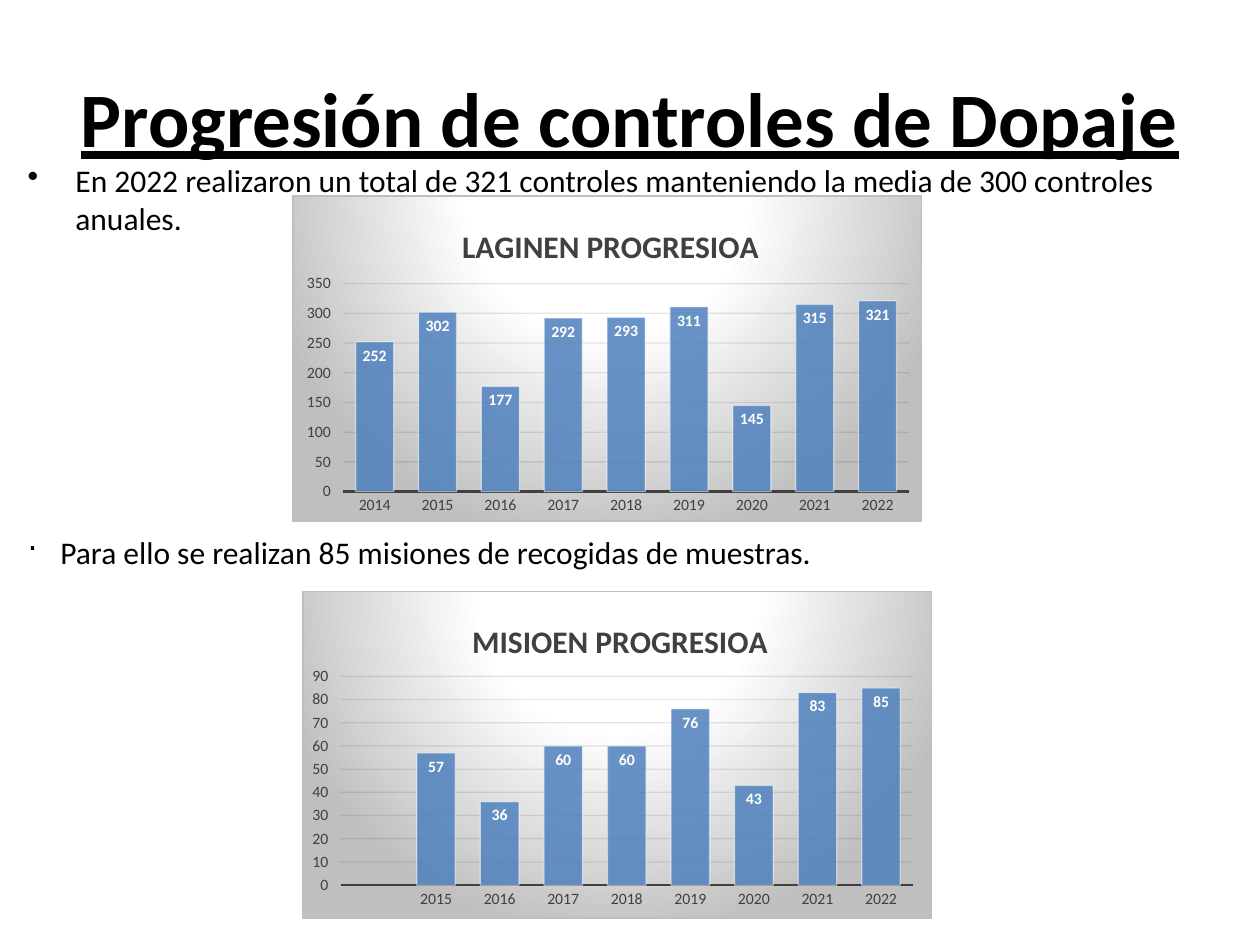
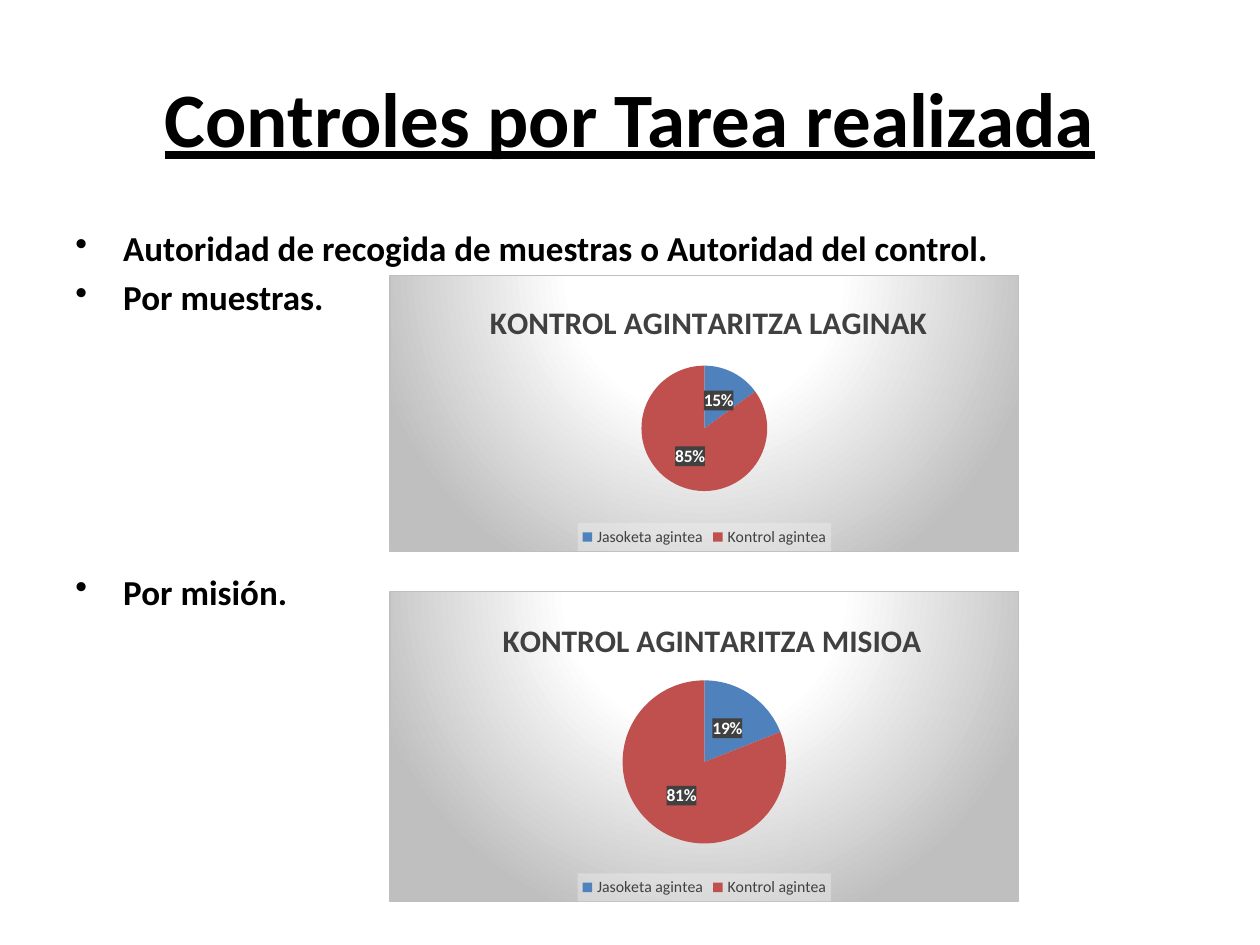
import pptx
import pptx.chart.data
import pptx.dml.color
import pptx.enum.chart
import pptx.enum.text
import pptx.oxml
import pptx.oxml.ns
import pptx.util

PX = 9144
FONT = "Calibri"
COLORS = {
    "black": "000000", "white": "FFFFFF", "gray": "404040", "silver": "BFBFBF",
    "grid": "0D0D0D", "legend": "F2F2F2", "blue": "4F81BD", "red": "C0504D",
}
NAMESPACES = pptx.oxml.ns.nsdecls("a", "c")
qn = pptx.oxml.ns.qn
Pt = pptx.util.Pt


def rgb(name):
    """Return the named colour as an RGB value."""
    return pptx.dml.color.RGBColor.from_string(COLORS[name])


def fade(element, percent):
    """Make every colour inside the element partly transparent."""
    for color in element.iter(qn("a:srgbClr")):
        pptx.oxml.ns.qn("a:alpha")
        alpha = color.makeelement(qn("a:alpha"), {"val": str(percent * 1000)})
        color.append(alpha)


def solid(name, percent):
    """Return chart shape properties with a transparent solid fill."""
    element = pptx.oxml.parse_xml(
        f'<c:spPr {NAMESPACES}><a:solidFill><a:srgbClr val="{COLORS[name]}"/>'
        '</a:solidFill></c:spPr>')
    fade(element, percent)
    return element


def backdrop():
    """Return the radial gradient and border behind a chart."""
    white, silver = COLORS["white"], COLORS["silver"]
    stops = "".join(
        f'<a:gs pos="{position * 1000}"><a:srgbClr val="{color}"/></a:gs>'
        for position, color in ((0, white), (39, white), (100, silver)))
    return pptx.oxml.parse_xml(
        f'<c:spPr {NAMESPACES}><a:gradFill flip="none" rotWithShape="1">'
        f'<a:gsLst>{stops}</a:gsLst><a:path path="circle">'
        '<a:fillToRect l="50000" t="-80000" r="50000" b="180000"/></a:path>'
        f'</a:gradFill><a:ln w="9525"><a:solidFill><a:srgbClr val="{silver}"/>'
        '</a:solidFill></a:ln></c:spPr>')


def arrange(parent, target="", **fractions):
    """Place a chart part by fractions of the chart area."""
    for old_layout in parent.findall(qn("c:layout")):
        parent.remove(old_layout)
    modes = '<c:xMode val="edge"/><c:yMode val="edge"/>'
    values = "".join(f'<c:{key} val="{value}"/>' for key, value in fractions.items())
    layout = pptx.oxml.parse_xml(
        f"<c:layout {NAMESPACES}><c:manualLayout>{target}{modes}{values}"
        "</c:manualLayout></c:layout>")
    text = parent.find(qn("c:tx"))
    if text is None:
        parent.insert(0, layout)
    else:
        text.addnext(layout)


class Deck:
    """Holds the presentation style and the current slide."""

    def __init__(self, width, height):
        """Start an empty presentation."""
        self.presentation = pptx.Presentation()
        self.presentation.slide_width = width * PX
        self.presentation.slide_height = height * PX
        self.slide = None

    def style(self, font, size, color="black", bold=False):
        """Apply the shared typeface with a size and colour."""
        font.name = FONT
        font.size = Pt(size)
        font.bold = bold
        font.color.rgb = rgb(color)

    def text_frame(self, left, top, width, height):
        """Add a wrapping text box and return its frame."""
        box = self.slide.shapes.add_textbox(left * PX, top * PX, width * PX, height * PX)
        box.text_frame.word_wrap = True
        return box.text_frame

    def add_slide(self, title):
        """Add a blank slide with an underlined title."""
        self.slide = self.presentation.slides.add_slide(self.presentation.slide_layouts[6])
        frame = self.text_frame(50, 30, 900, 125)
        frame.vertical_anchor = pptx.enum.text.MSO_ANCHOR.MIDDLE
        paragraph = frame.paragraphs[0]
        paragraph.text = title
        paragraph.alignment = pptx.enum.text.PP_ALIGN.CENTER
        self.style(paragraph.font, 44, bold=True)
        paragraph.font.underline = True

    def add_bullets(self, left, top, width, height, lines, size,
                    bold=False, bullet="•", indent=38):
        """Add a bulleted list."""
        frame = self.text_frame(left, top, width, height)
        for number, line in enumerate(lines):
            paragraph = frame.add_paragraph() if number else frame.paragraphs[0]
            paragraph.text = line
            properties = paragraph._p.get_or_add_pPr()
            properties.set("marL", str(indent * PX))
            properties.set("indent", str(-indent * PX))
            properties.append(properties.makeelement(qn("a:buChar"), {"char": bullet}))
            if number:
                paragraph.space_before = Pt(size * 0.2)
            self.style(paragraph.font, size, bold=bold)

    def add_chart(self, kind, area, title, title_left, categories, values, plot_area):
        """Add a titled single-series chart on the gradient backdrop."""
        data = pptx.chart.data.CategoryChartData()
        data.categories = categories
        data.add_series("Series 1", values)
        chart = self.slide.shapes.add_chart(kind, *(length * PX for length in area), data).chart
        self.style(chart.font, 10)
        chart.has_legend = False
        chart.has_title = True
        paragraph = chart.chart_title.text_frame.paragraphs[0]
        paragraph.text = title
        self.style(paragraph.font, 18, "gray", True)
        arrange(chart.element.find(".//" + qn("c:title")), x=title_left, y=0.07)
        arrange(chart.element.find(".//" + qn("c:plotArea")),
                '<c:layoutTarget val="inner"/>', **dict(zip("xywh", plot_area)))
        chart.element.find(qn("c:chart")).addnext(backdrop())
        chart.plots[0].has_data_labels = True
        return chart

    def add_columns(self, area, title, title_left, categories, values, step, top, plot_area):
        """Add a column chart with values inside the bar ends."""
        chart = self.add_chart(pptx.enum.chart.XL_CHART_TYPE.COLUMN_CLUSTERED, area,
                               title, title_left, categories, values, plot_area)
        plot = chart.plots[0]
        plot.gap_width = 65
        plot.vary_by_categories = False
        labels = plot.data_labels
        labels.show_value = True
        labels.position = pptx.enum.chart.XL_LABEL_POSITION.INSIDE_END
        self.style(labels.font, 9, "white", True)

        bars = plot.series[0].format
        bars.fill.solid()
        bars.fill.fore_color.rgb = rgb("blue")
        properties = chart.element.find(".//" + qn("c:ser")).find(qn("c:spPr"))
        fade(properties, 85)
        bars.line.color.rgb = rgb("white")
        bars.line.width = Pt(0.75)
        fade(properties.find(qn("a:ln")), 50)

        for axis in (chart.category_axis, chart.value_axis):
            self.style(axis.tick_labels.font, 9, "gray")
        chart.category_axis.major_tick_mark = pptx.enum.chart.XL_TICK_MARK.NONE
        chart.category_axis.format.line.color.rgb = rgb("gray")
        chart.category_axis.format.line.width = Pt(1.5)
        value_axis = chart.value_axis
        value_axis.minimum_scale = 0
        value_axis.maximum_scale = top
        value_axis.major_unit = step
        value_axis.format.line.fill.background()
        value_axis.has_major_gridlines = True
        value_axis.major_gridlines.format.line.color.rgb = rgb("grid")
        value_axis.major_gridlines.format.line.width = Pt(0.75)
        fade(chart.element.find(".//" + qn("c:majorGridlines")), 10)

    def add_pie(self, area, title, title_left, values, plot_area):
        """Add a pie of the two authorities with percentages and a legend."""
        chart = self.add_chart(pptx.enum.chart.XL_CHART_TYPE.PIE, area, title, title_left,
                               ["Jasoketa agintea", "Kontrol agintea"], values, plot_area)
        plot = chart.plots[0]
        for number, color in enumerate(("blue", "red")):
            fill = plot.series[0].points[number].format.fill
            fill.solid()
            fill.fore_color.rgb = rgb(color)
        labels = plot.data_labels
        labels.show_value = False
        labels.show_percentage = True
        labels.number_format = "0%"
        labels.number_format_is_linked = False
        labels.position = pptx.enum.chart.XL_LABEL_POSITION.CENTER
        self.style(labels.font, 10, "white", True)
        label_text = chart.element.find(".//" + qn("c:dLbls")).find(qn("c:txPr"))
        label_text.addprevious(solid("gray", 90))
        chart.has_legend = True
        chart.legend.position = pptx.enum.chart.XL_LEGEND_POSITION.BOTTOM
        chart.legend.include_in_layout = False
        self.style(chart.legend.font, 9, "gray")
        legend_text = chart.element.find(".//" + qn("c:legend")).find(qn("c:txPr"))
        legend_text.addprevious(solid("legend", 39))


def main():
    """Build both slides and save them."""
    deck = Deck(1000, 750)
    years = [str(year) for year in range(2014, 2023)]

    deck.add_slide("Progresión de controles de Dopaje")
    deck.add_bullets(12, 123, 969, 70, [
        "En 2022 realizaron un total de 321 controles manteniendo la media de 300 "
        "controles anuales."], 18)
    deck.add_bullets(12, 418, 969, 41, [
        "Para ello se realizan 85 misiones de recogidas de muestras."],
        18, bullet="·", indent=26)
    deck.add_columns((232, 155, 500, 259), "LAGINEN PROGRESIOA", 0.26, years,
                     [252, 302, 177, 292, 293, 311, 145, 315, 321], 50, 350,
                     (0.08, 0.27, 0.9, 0.64))
    deck.add_columns((240, 469, 500, 260), "MISIOEN PROGRESIOA", 0.26, [""] + years[1:],
                     [None, 57, 36, 60, 60, 76, 43, 83, 85], 10, 90,
                     (0.06, 0.26, 0.91, 0.64))

    deck.add_slide("Controles por Tarea realizada")
    deck.add_bullets(50, 175, 900, 84, [
        "Autoridad de recogida de muestras o Autoridad del control.",
        "Por muestras."], 20, bold=True)
    deck.add_bullets(50, 448, 250, 44, ["Por misión."], 20, bold=True)
    deck.add_pie((309, 218, 500, 220), "KONTROL AGINTARITZA LAGINAK", 0.15, [15, 85],
                 (0.4, 0.32, 0.2, 0.47))
    deck.add_pie((309, 469, 500, 247), "KONTROL AGINTARITZA MISIOA", 0.17, [19, 81],
                 (0.37, 0.28, 0.26, 0.54))

    deck.presentation.save("out.pptx")


if __name__ == "__main__":
    main()
